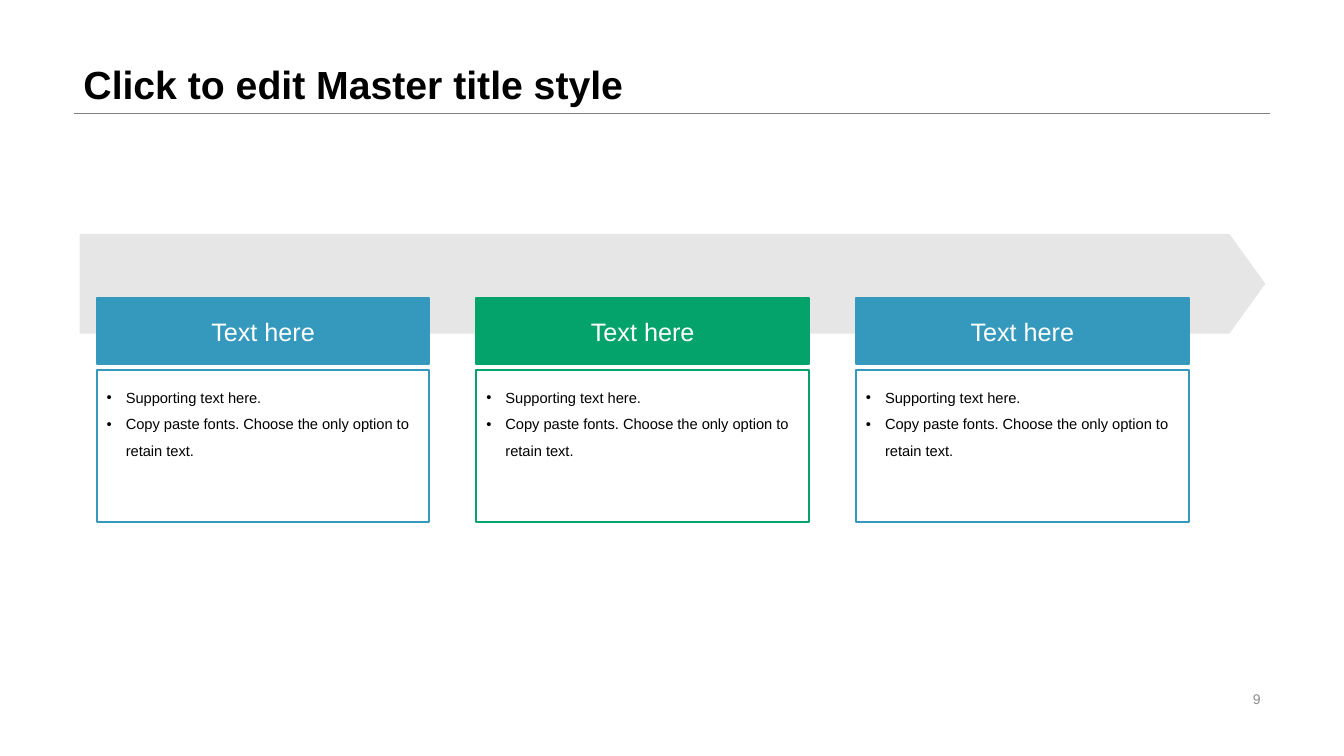
from lxml.etree import SubElement
from pptx import Presentation
from pptx.dml.color import RGBColor
from pptx.enum.shapes import MSO_CONNECTOR, MSO_SHAPE
from pptx.enum.text import MSO_ANCHOR, PP_ALIGN
from pptx.oxml.ns import qn
from pptx.util import Inches, Pt

TITLE = "Click to edit Master title style"
PAGE_NUMBER = "9"
SUPPORT = [
    "Supporting text here.",
    "Copy paste fonts. Choose the only option to retain text.",
]
STAGES = [
    ("Text here", SUPPORT, "3599BD"),
    ("Text here", SUPPORT, "04A36B"),
    ("Text here", SUPPORT, "3599BD"),
]

MARGIN, RIGHT, RULE_Y = 0.73, 12.6, 1.12
FIRST_LEFT, LAST_LEFT, STAGE_WIDTH = 0.96, 8.49, 3.3
HEADING_TOP, HEADING_HEIGHT = 2.96, 0.65
SUPPORT_TOP, SUPPORT_HEIGHT = 3.67, 1.51
HANGING = 0.19


def color(hex_code):
    return RGBColor.from_string(hex_code)


def write(shape, lines, size=18, ink="000000", bold=False, align=PP_ALIGN.LEFT,
          anchor=MSO_ANCHOR.MIDDLE, insets=(0.1, 0.05, 0.1, 0.05),
          spacing=1.0, bullet=None):
    frame = shape.text_frame
    frame.word_wrap = True
    frame.vertical_anchor = anchor
    (frame.margin_left, frame.margin_top,
     frame.margin_right, frame.margin_bottom) = map(Inches, insets)
    for index, line in enumerate(lines):
        paragraph = frame.paragraphs[0] if index == 0 else frame.add_paragraph()
        paragraph.alignment = align
        paragraph.line_spacing = spacing
        if bullet:
            properties = paragraph._p.get_or_add_pPr()
            properties.set("marL", str(Inches(HANGING)))
            properties.set("indent", str(-Inches(HANGING)))
            SubElement(properties, qn("a:buFont"), typeface="Arial")
            SubElement(properties, qn("a:buChar"), char=bullet)
            tabs = SubElement(properties, qn("a:tabLst"))
            SubElement(tabs, qn("a:tab"), pos=str(Inches(0.25)), algn="l")
        run = paragraph.add_run()
        run.text = line
        run.font.name = "Arial"
        run.font.size = Pt(size)
        run.font.bold = bold
        run.font.color.rgb = color(ink)


def add_box(slide, preset, left, top, width, height, fill=None, outline=None):
    box = slide.shapes.add_shape(
        preset, Inches(left), Inches(top), Inches(width), Inches(height))
    box.shadow.inherit = False
    if fill:
        box.fill.solid()
        box.fill.fore_color.rgb = color(fill)
    else:
        box.fill.background()
    if outline:
        box.line.color.rgb = color(outline)
        box.line.width = Pt(1.5)
    else:
        box.line.fill.background()
    return box


def main():
    deck = Presentation()
    deck.slide_width, deck.slide_height = Inches(13.33), Inches(7.5)
    slide = deck.slides.add_slide(deck.slide_layouts[6])

    rule = slide.shapes.add_connector(
        MSO_CONNECTOR.STRAIGHT, Inches(MARGIN), Inches(RULE_Y),
        Inches(RIGHT), Inches(RULE_Y))
    rule.line.color.rgb = color("808080")
    rule.line.width = Pt(0.25)
    SubElement(rule._element.spPr, qn("a:effectLst"))

    title = slide.shapes.add_textbox(
        Inches(MARGIN), 0, Inches(RIGHT - MARGIN), Inches(RULE_Y))
    write(title, [TITLE], size=28, bold=True, anchor=MSO_ANCHOR.BOTTOM, spacing=0.9)

    page_number = slide.shapes.add_textbox(
        Inches(9.42), Inches(6.82), Inches(3.18), Inches(0.23))
    write(page_number, [PAGE_NUMBER], size=10, ink="8C8C8C", align=PP_ALIGN.RIGHT)

    arrow = add_box(slide, MSO_SHAPE.PENTAGON, 0.79, 2.32, 11.76, 0.99, fill="CCCCCC")
    arrow.adjustments[0] = 0.36
    arrow_color = arrow._element.spPr.find(qn("a:solidFill"))[0]
    SubElement(arrow_color, qn("a:alpha"), val="48000")

    pitch = (LAST_LEFT - FIRST_LEFT) / (len(STAGES) - 1)
    for index, (heading, support, accent) in enumerate(STAGES):
        left = FIRST_LEFT + index * pitch
        support_box = add_box(slide, MSO_SHAPE.RECTANGLE, left, SUPPORT_TOP,
                              STAGE_WIDTH, SUPPORT_HEIGHT, outline=accent)
        write(support_box, support, size=10.5, anchor=MSO_ANCHOR.TOP,
              insets=(0.1, 0.1, 0.1, 0.05), spacing=1.5, bullet="•")
        heading_box = add_box(slide, MSO_SHAPE.RECTANGLE, left, HEADING_TOP,
                              STAGE_WIDTH, HEADING_HEIGHT, fill=accent, outline=accent)
        write(heading_box, [heading], ink="FFFFFF", align=PP_ALIGN.CENTER,
              insets=(0.05, 0.05, 0.05, 0.05))

    deck.save("out.pptx")


if __name__ == "__main__":
    main()
